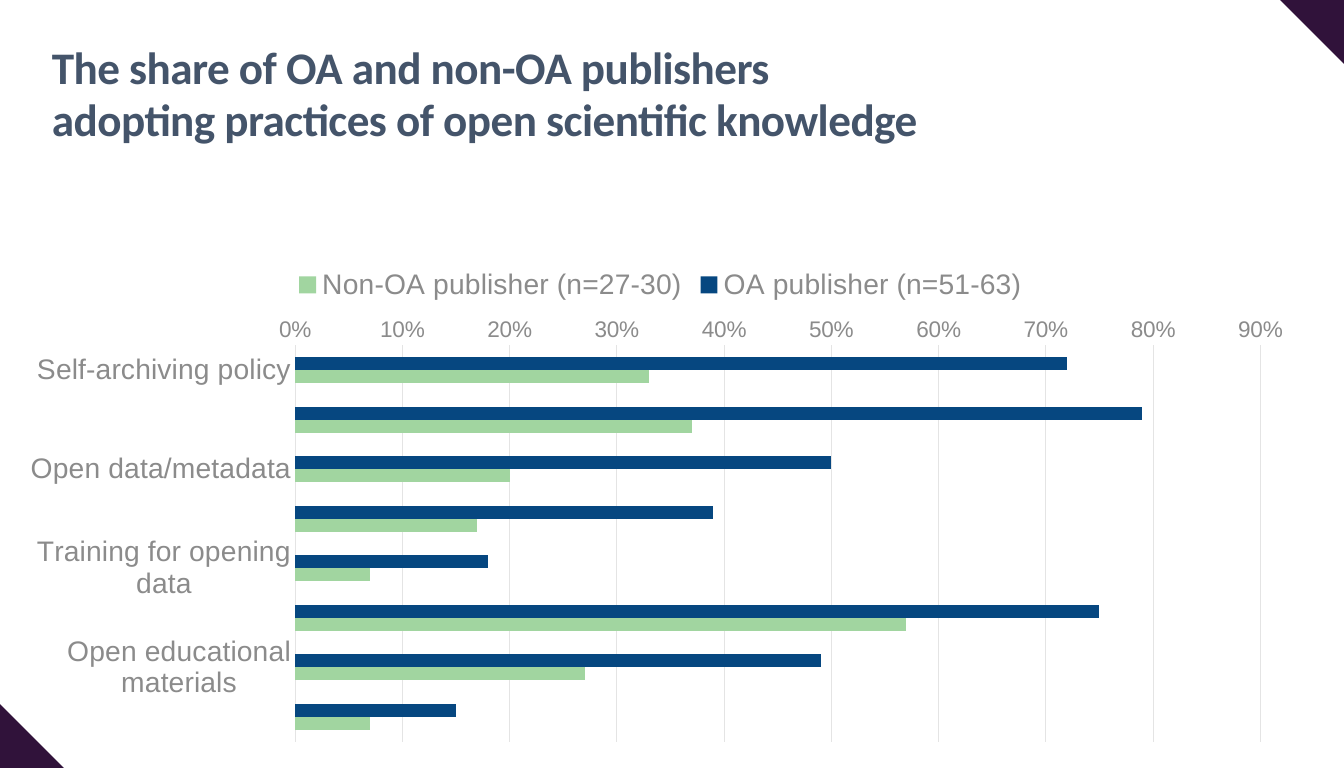
from lxml.etree import SubElement
from pptx import Presentation
from pptx.chart.data import CategoryChartData
from pptx.dml.color import RGBColor
from pptx.enum.chart import XL_CHART_TYPE as ChartType
from pptx.enum.chart import XL_LEGEND_POSITION as LegendPosition
from pptx.enum.chart import XL_TICK_MARK as TickMark
from pptx.enum.shapes import MSO_SHAPE as Shape
from pptx.enum.text import MSO_ANCHOR as Anchor
from pptx.enum.text import PP_ALIGN as Align
from pptx.oxml.ns import qn
from pptx.util import Inches, Pt

# Content
TITLE = "The share of OA and non-OA publishers adopting practices of open scientific knowledge"
PRACTICES = [
    # axis label (every second row has none), OA share, non-OA share
    ("Self-archiving policy", 0.72, 0.33),
    ("", 0.79, 0.37),
    ("Open data/metadata", 0.5, 0.2),
    ("", 0.39, 0.17),
    ("Training for opening data", 0.18, 0.07),
    ("", 0.75, 0.57),
    ("Open educational materials", 0.49, 0.27),
    ("", 0.15, 0.07),
]
PUBLISHERS = [("OA publisher (n=51-63)", "oa"), ("Non-OA publisher (n=27-30)", "non_oa")]
COLORS = {
    "corner": "30123A", "title": "44546A", "text": "4D4D4D", "label": "8B8B8B",
    "grid": "E4E4E4", "oa": "064780", "non_oa": "A1D5A0",
}
WIDTH, HEIGHT = 13.23, 7.56
CORNER_SIDE = 0.89
PLOT_LAYOUT = {"x": 0.22, "y": 0.18, "w": 0.74, "h": 0.8}  # shares of the chart frame


def color(name):
    return RGBColor.from_string(COLORS[name])


def style_font(font, size, name):
    font.name = "Arial"
    font.size = Pt(size)
    font.color.rgb = color(name)


def style_line(line):
    line.color.rgb = color("grid")
    line.width = Pt(0.75)


deck = Presentation()
deck.slide_width, deck.slide_height = Inches(WIDTH), Inches(HEIGHT)
page = deck.slides.add_slide(deck.slide_layouts[5])

# Corner accents: squares turned by 45 degrees, centred on two slide corners
for x, y in [(0, HEIGHT), (WIDTH, 0)]:
    corner = page.shapes.add_shape(
        Shape.RECTANGLE, Inches(x - CORNER_SIDE / 2), Inches(y - CORNER_SIDE / 2),
        Inches(CORNER_SIDE), Inches(CORNER_SIDE))
    corner.rotation = 45
    corner.shadow.inherit = False
    corner.fill.solid()
    corner.fill.fore_color.rgb = color("corner")
    corner.line.fill.background()

# Title
title = page.shapes.title
title.left, title.top, title.width, title.height = map(Inches, (0.47, 0.39, 8.82, 1.17))
frame = title.text_frame
frame.text = TITLE
frame.word_wrap = True
frame.vertical_anchor = Anchor.TOP
frame.margin_left = frame.margin_right = frame.margin_top = frame.margin_bottom = Inches(0.04)
para = frame.paragraphs[0]
para.alignment = Align.LEFT
para.line_spacing = 0.95
span = para.runs[0]
span.font.name = "Calibri"
span.font.size = Pt(32)
span.font.bold = True
span.font.color.rgb = color("title")
span.font._element.set("spc", "-40")

# Chart
data = CategoryChartData(number_format="0%")
data.categories = [practice for practice, *_ in PRACTICES]
for column, (publisher, _) in enumerate(PUBLISHERS, start=1):
    data.add_series(publisher, [row[column] for row in PRACTICES])
chart = page.shapes.add_chart(
    ChartType.BAR_CLUSTERED, Inches(0.08), Inches(2.52), Inches(12.84), Inches(4.88), data).chart
chart.has_title = False
style_font(chart.font, 10, "text")

plot = chart.plots[0]
plot.vary_by_categories = False
plot.gap_width = 182
plot.overlap = 0
for series, (_, key) in zip(plot.series, PUBLISHERS):
    series.format.fill.solid()
    series.format.fill.fore_color.rgb = color(key)

# Axes
practice_axis = chart.category_axis
practice_axis.reverse_order = True
style_line(practice_axis.format.line)
style_font(practice_axis.tick_labels.font, 20, "label")

share_axis = chart.value_axis
share_axis.minimum_scale, share_axis.maximum_scale, share_axis.major_unit = 0, 0.9, 0.1
share_axis.has_major_gridlines = True
style_line(share_axis.major_gridlines.format.line)
share_axis.format.line.fill.background()
share_axis.tick_labels.number_format = "0%"
share_axis.tick_labels.number_format_is_linked = False
style_font(share_axis.tick_labels.font, 16, "label")
for axis in (practice_axis, share_axis):
    axis.major_tick_mark = axis.minor_tick_mark = TickMark.NONE

# Legend
chart.has_legend = True
chart.legend.position = LegendPosition.TOP
chart.legend.include_in_layout = False
style_font(chart.legend.font, 20, "label")

# Fixed inner plot area
plot_area = chart._chartSpace.chart.plotArea
layout = plot_area.find(qn("c:layout"))
if layout is None:
    layout = SubElement(plot_area, qn("c:layout"))
    plot_area.insert(0, layout)
manual = SubElement(layout, qn("c:manualLayout"))
settings = {"layoutTarget": "inner", "xMode": "edge", "yMode": "edge", **PLOT_LAYOUT}
for tag, value in settings.items():
    SubElement(manual, qn(f"c:{tag}")).set("val", str(value))

deck.save("out.pptx")
